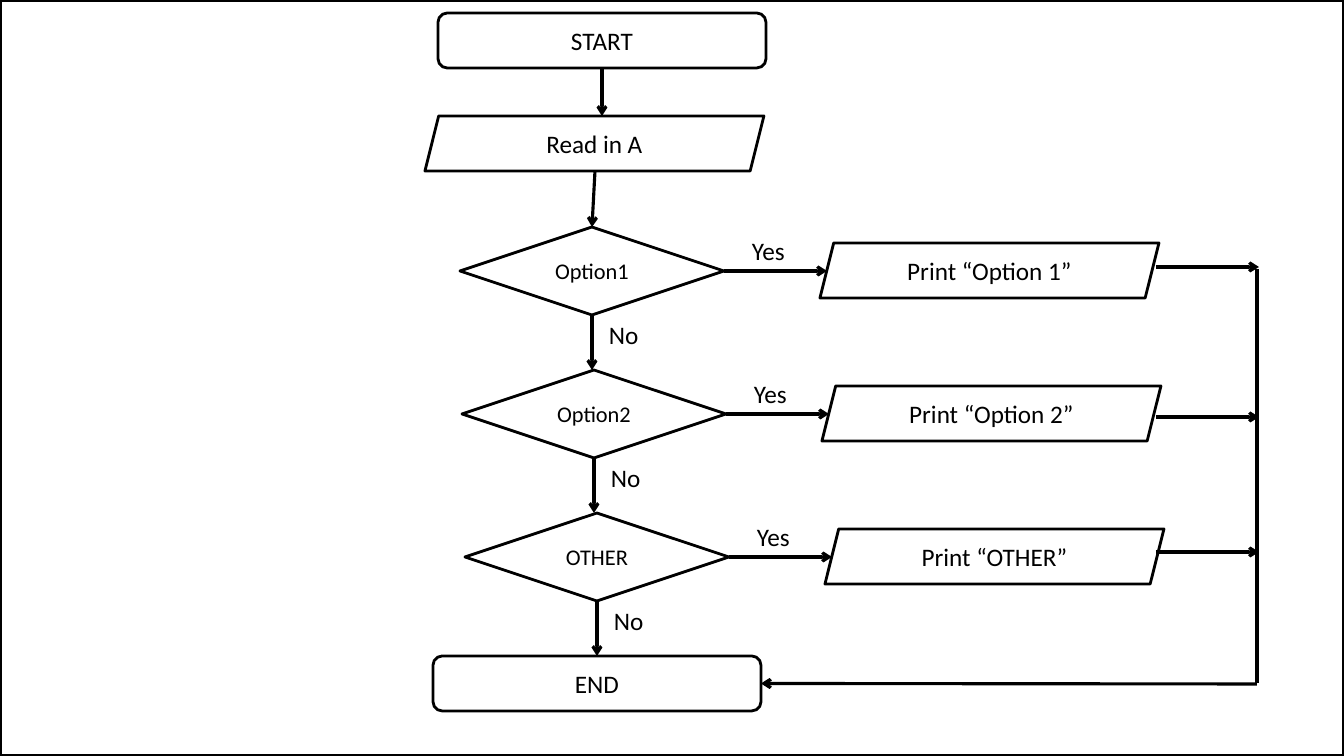
from lxml import etree
from pptx import Presentation
from pptx.dml.color import RGBColor
from pptx.enum.shapes import MSO_CONNECTOR, MSO_SHAPE
from pptx.enum.text import MSO_ANCHOR, MSO_AUTO_SIZE, PP_ALIGN
from pptx.oxml.ns import qn
from pptx.util import Pt

STRAIGHT = MSO_CONNECTOR.STRAIGHT
ROUNDED = MSO_SHAPE.ROUNDED_RECTANGLE
PARALLELOGRAM = MSO_SHAPE.PARALLELOGRAM
DIAMOND = MSO_SHAPE.DIAMOND
RECTANGLE = MSO_SHAPE.RECTANGLE
MIDDLE = MSO_ANCHOR.MIDDLE
CENTER = PP_ALIGN.CENTER
LEFT = PP_ALIGN.LEFT
GROW = MSO_AUTO_SIZE.SHAPE_TO_FIT_TEXT

TOP, BOTTOM, RIGHT = 0, 2, 3
WIDTH, HEIGHT = 1344, 756
TRUNK_X = 1257
ROW_STEP = 143


def emu(px):
    return round(px * 914400 / 100.8)


def rgb(value):
    return RGBColor.from_string(value)


class Flowchart:
    """Draws flowchart elements on one slide in a shared style."""

    ink = "000000"
    font = "Calibri"

    def __init__(self, page):
        self.page = page

    def set_text(self, box, text, size, align):
        para = box.text_frame.paragraphs[0]
        para.text = text
        para.alignment = align
        for span in para.runs:
            span.font.name = self.font
            span.font.size = Pt(size)
            span.font.color.rgb = rgb(self.ink)

    def box(self, kind, left, top, width, height, text="", size=18, weight=2):
        box = self.page.shapes.add_shape(
            kind, emu(left), emu(top), emu(width), emu(height))
        box.shadow.inherit = False
        box.fill.background()
        box.line.color.rgb = rgb(self.ink)
        box.line.width = Pt(weight)
        box.text_frame.vertical_anchor = MIDDLE
        if text:
            self.set_text(box, text, size, CENTER)
        return box

    def label(self, left, top, width, text):
        box = self.page.shapes.add_textbox(
            emu(left), emu(top), emu(width), emu(40))
        box.text_frame.word_wrap = False
        box.text_frame.auto_size = GROW
        self.set_text(box, text, 18, LEFT)

    def line(self, start, end, source=None, target=None, arrow=True):
        line = self.page.shapes.add_connector(
            STRAIGHT, *(emu(px) for px in (*start, *end)))
        line.line.color.rgb = rgb(self.ink)
        line.line.width = Pt(2.25)
        properties = line._element.spPr
        if arrow:
            outline = properties.find(qn("a:ln"))
            etree.SubElement(outline, qn("a:tailEnd"), type="arrow")
        etree.SubElement(properties, qn("a:effectLst"))
        if source:
            line.begin_connect(*source)
        if target:
            line.end_connect(*target)


def main():
    deck = Presentation()
    deck.slide_width, deck.slide_height = emu(WIDTH), emu(HEIGHT)
    chart = Flowchart(deck.slides.add_slide(deck.slide_layouts[6]))

    chart.box(RECTANGLE, 0, 0, WIDTH, HEIGHT, weight=3)
    start = chart.box(ROUNDED, 438, 13, 328, 55, "START")
    chart.box(PARALLELOGRAM, 425, 116, 339, 55, "Read in A")
    end = chart.box(ROUNDED, 433, 656, 328, 55, "END")
    chart.line((602, 68), (602, 116), source=(start, BOTTOM))

    rows = [
        ("Option1", "Print “Option 1”", 267),
        ("Option2", "Print “Option 2”", 417),
        ("OTHER", "Print “OTHER”", 552),
    ]
    decisions = []
    for index, (question, output, exit_y) in enumerate(rows):
        shift = index * 5 // 2
        top = 227 + index * ROW_STEP
        middle, bottom = top + 44, top + 88
        center = 592 + shift
        decision = chart.box(
            DIAMOND, 460 + shift, top, 264, 88, question, size=16)
        decisions.append(decision)
        chart.box(PARALLELOGRAM, 820 + shift, top + 16, 339, 55, output)
        chart.label(742 + shift, top + 3, 53, "Yes")
        chart.label(599 + shift, top + 87, 50, "No")
        chart.line((724 + shift, middle), (827 + shift, middle),
                   source=(decision, RIGHT))
        last = index == len(rows) - 1
        chart.line((center, bottom), (center, top + ROW_STEP),
                   source=(decision, BOTTOM),
                   target=(end, TOP) if last else None)
        chart.line((1156, exit_y), (1259, exit_y))

    chart.line((595, 171), (592, 227), target=(decisions[0], TOP))
    chart.line((TRUNK_X, 269), (TRUNK_X, 683), arrow=False)
    chart.line((TRUNK_X, 684), (761, 684), target=(end, RIGHT))
    deck.save("out.pptx")


if __name__ == "__main__":
    main()
